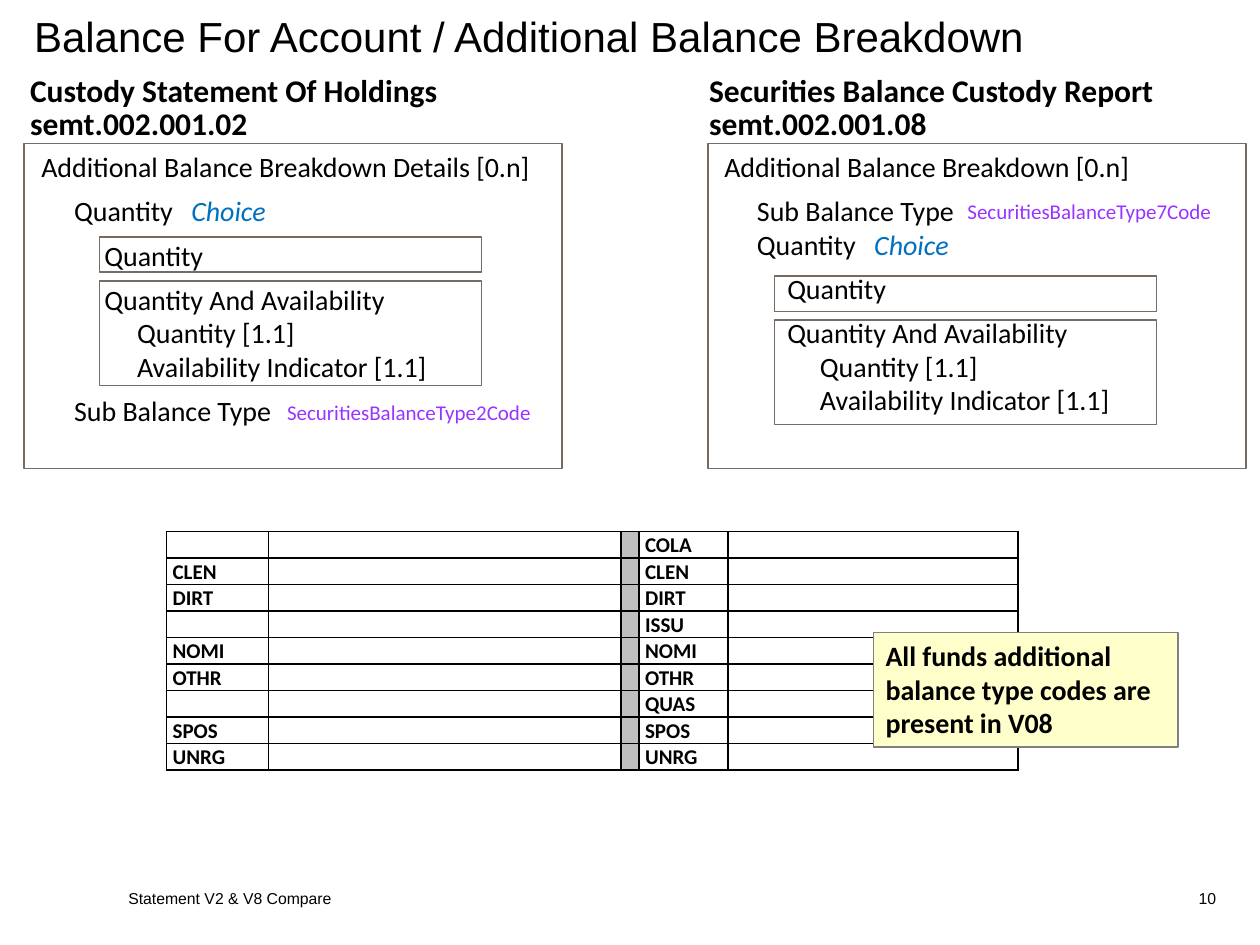
import pptx
import pptx.dml.color
import pptx.enum.shapes
import pptx.enum.text
import pptx.oxml
import pptx.oxml.ns
import pptx.util
from lxml import etree

Inches = pptx.util.Inches
Pt = pptx.util.Pt
RGBColor = pptx.dml.color.RGBColor
Anchor = pptx.enum.text.MSO_ANCHOR
Align = pptx.enum.text.PP_ALIGN
qn = pptx.oxml.ns.qn

BLACK = RGBColor(0x00, 0x00, 0x00)
BROWN = RGBColor(0x76, 0x6A, 0x62)
BLUE = RGBColor(0x00, 0x70, 0xC0)
PURPLE = RGBColor(0x99, 0x33, 0xFF)
GREY = RGBColor(0x80, 0x80, 0x80)
SILVER = RGBColor(0xBF, 0xBF, 0xBF)
CREAM = RGBColor(0xFF, 0xFF, 0xCC)

INDENTS = (0.26, 0.5, 0.76)
CHOICE = (0.26, 1.19)

LEFT = [
    ("Additional Balance Breakdown Details [0.n]", 6),
    ("\tQuantity\t|Choice", 6),
    ("\t\tQuantity", 6),
    ("\t\tQuantity And Availability", 0),
    ("\t\t\tQuantity [1.1]", 0),
    ("\t\t\tAvailability Indicator [1.1]", 6),
    ("\tSub Balance Type", 0),
]
RIGHT = [
    ("Additional Balance Breakdown [0.n]", 6),
    ("\tSub Balance Type", 0),
    ("\tQuantity\t|Choice", 6),
    ("\t\tQuantity", 6),
    ("\t\tQuantity And Availability", 0),
    ("\t\t\tQuantity [1.1]", 0),
    ("\t\t\tAvailability Indicator [1.1]", 0),
]
CODES = ["COLA", "CLEN", "DIRT", "ISSU", "NOMI", "OTHR", "QUAS", "SPOS", "UNRG"]
ADDED = {"COLA", "ISSU", "QUAS"}


class Page:
    def __init__(self, deck):
        self.slide = deck.slides.add_slide(deck.slide_layouts[5])
        self.shapes = self.slide.shapes

    def style(self, para, size, color=BLACK, bold=False, face="Calibri"):
        font = para.font
        font.name, font.size, font.bold = face, Pt(size), bold
        font.color.rgb = color

    def title(self, text, x, y, w, h):
        title = self.shapes.title
        title.left, title.top = Inches(x), Inches(y)
        title.width, title.height = Inches(w), Inches(h)
        frame = title.text_frame
        frame.text = text
        frame.auto_size = pptx.enum.text.MSO_AUTO_SIZE.NONE
        frame.vertical_anchor = Anchor.MIDDLE
        para = frame.paragraphs[0]
        para.alignment = Align.LEFT
        self.style(para, 24, face="Arial")

    def text(self, lines, x, y, w, h, size, color=BLACK, bold=False,
             face="Calibri", align=Align.LEFT, anchor=Anchor.TOP, space=None):
        box = self.shapes.add_textbox(Inches(x), Inches(y), Inches(w), Inches(h))
        frame = box.text_frame
        frame.word_wrap = True
        frame.vertical_anchor = anchor
        frame.text = "\n".join(lines)
        for para in frame.paragraphs:
            para.alignment = align
            if space:
                para.line_spacing = Pt(space)
            self.style(para, size, color, bold, face)

    def outline(self, rows, x, y, w, h):
        """Add tab-indented lines; the part after a bar is the choice mark."""
        box = self.shapes.add_textbox(Inches(x), Inches(y), Inches(w), Inches(h))
        frame = box.text_frame
        frame.word_wrap = True
        for i, (line, after) in enumerate(rows):
            para = frame.add_paragraph() if i else frame.paragraphs[0]
            label, _, mark = line.partition("|")
            para.add_run().text = label
            para.space_after = Pt(after)
            self.tabs(para, CHOICE if mark else INDENTS)
            self.style(para, 16)
            if mark:
                run = para.add_run()
                run.text = mark
                run.font.italic = True
                run.font.color.rgb = BLUE

    def tabs(self, para, stops):
        stop_list = etree.SubElement(para._p.get_or_add_pPr(), qn("a:tabLst"))
        for stop in stops:
            etree.SubElement(stop_list, qn("a:tab"), pos=str(Inches(stop)), algn="l")

    def rect(self, x, y, w, h, line=BROWN, fill=None):
        box = self.shapes.add_shape(pptx.enum.shapes.MSO_SHAPE.RECTANGLE,
                                    Inches(x), Inches(y), Inches(w), Inches(h))
        box.shadow.inherit = False
        box.line.color.rgb = line
        box.line.width = Pt(0.75)
        if fill is None:
            box.fill.background()
        else:
            box.fill.solid()
            box.fill.fore_color.rgb = fill
        return box

    def note(self, text, x, y, w, h):
        frame = self.rect(x, y, w, h, GREY, CREAM).text_frame
        frame.word_wrap = True
        frame.vertical_anchor = Anchor.TOP
        frame.text = text
        frame.paragraphs[0].alignment = Align.LEFT
        self.style(frame.paragraphs[0], 16, bold=True)

    def table(self, rows, x, y, widths, height):
        grid = self.shapes.add_table(
            len(rows), len(widths), Inches(x), Inches(y),
            Inches(sum(widths)), Inches(height * len(rows))).table
        grid.first_row = grid.horz_banding = False
        for col, width in zip(grid.columns, widths):
            col.width = Inches(width)
        for r, row in enumerate(rows):
            grid.rows[r].height = Inches(height)
            for c, text in enumerate(row):
                self.cell(grid.cell(r, c), text, SILVER if c == 2 else None)

    def cell(self, cell, text, fill):
        cell.margin_left = Inches(0.05)
        cell.margin_right = cell.margin_top = Inches(0.01)
        cell.margin_bottom = 0
        cell.vertical_anchor = Anchor.BOTTOM
        for side in ("a:lnL", "a:lnR", "a:lnT", "a:lnB"):
            line = etree.SubElement(cell._tc.get_or_add_tcPr(), qn(side), w=str(Pt(1)))
            solid = etree.SubElement(line, qn("a:solidFill"))
            etree.SubElement(solid, qn("a:srgbClr"), val=str(BLACK))
        if fill is None:
            cell.fill.background()
        else:
            cell.fill.solid()
            cell.fill.fore_color.rgb = fill
        cell.text = text
        self.style(cell.text_frame.paragraphs[0], 12, bold=True)


def main():
    deck = pptx.Presentation()
    deck.slide_width, deck.slide_height = Inches(10), Inches(7.5)
    page = Page(deck)
    page.title("Balance For Account / Additional Balance Breakdown", 0.17, 0, 9.73, 0.56)
    page.text(["Statement V2 & V8 Compare"], 0.92, 7, 6.21, 0.25, 9,
              face="Arial", anchor=Anchor.MIDDLE)
    page.text(["10"], 8.92, 7, 0.83, 0.25, 9, face="Arial",
              align=Align.RIGHT, anchor=Anchor.MIDDLE)

    for x in (0.19, 5.62):
        page.rect(x, 1.14, 4.27, 2.58)
    for x, y in ((0.79, 1.88), (6.15, 2.19)):
        page.rect(x, y, 3.03, 0.28)
        page.rect(x, y + 0.35, 3.03, 0.83)
    page.outline(LEFT, 0.23, 1.14, 4.12, 2.32)
    page.outline(RIGHT, 5.65, 1.14, 4.17, 2.24)
    page.text(["SecuritiesBalanceType2Code"], 2.18, 3.12, 2.16, 0.3, 12, PURPLE)
    page.text(["SecuritiesBalanceType7Code"], 7.58, 1.53, 2.16, 0.3, 12, PURPLE)

    rows = [["" if code in ADDED else code, "", "", code, ""] for code in CODES]
    page.table(rows, 1.32, 4.22, (0.81, 2.8, 0.14, 0.71, 2.3), 0.21)
    page.note("All funds additional balance type codes are present in V08",
              6.93, 5.02, 2.42, 0.91)

    page.text(["Custody Statement Of Holdings", "semt.002.001.02"],
              0.14, 0.55, 3.46, 0.63, 18, bold=True, space=19)
    page.text(["Securities Balance Custody Report", "semt.002.001.08"],
              5.53, 0.55, 3.76, 0.63, 18, bold=True, space=19)
    deck.save("out.pptx")


if __name__ == "__main__":
    main()
